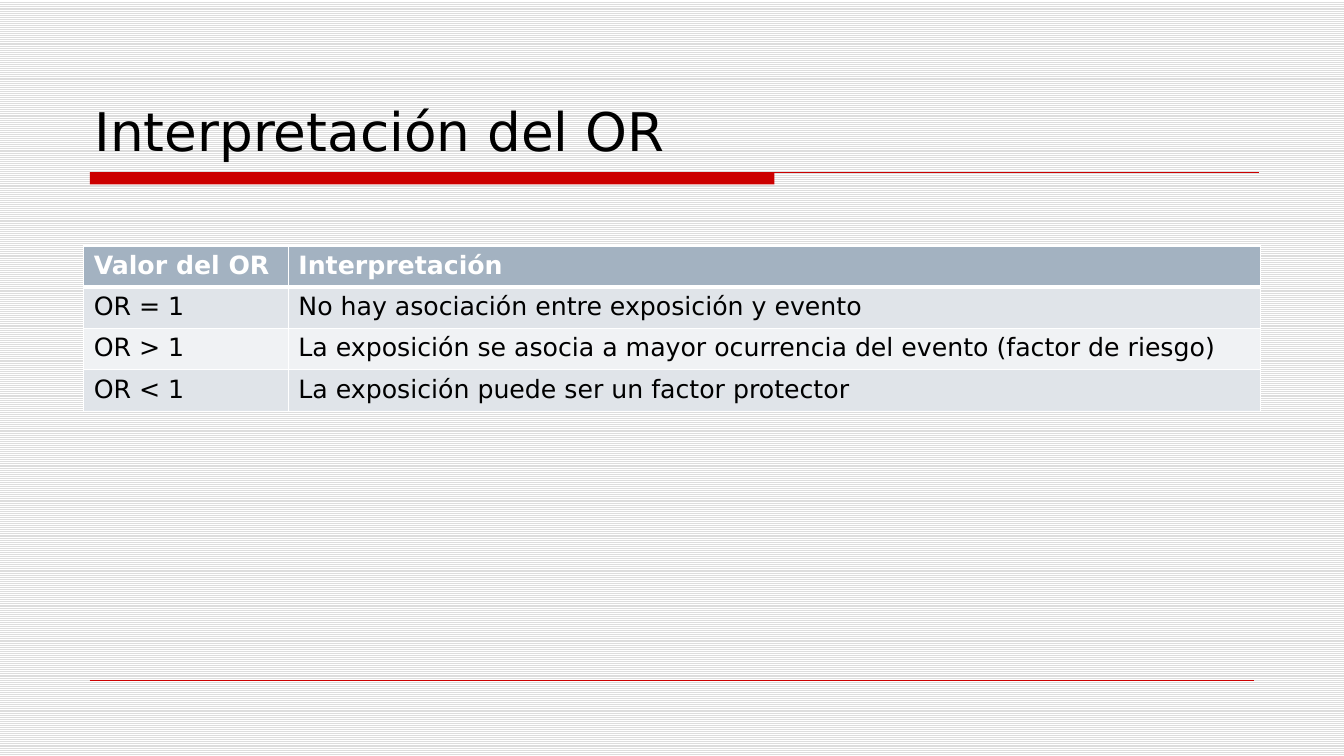
import pptx
import pptx.dml.color
import pptx.enum.dml
import pptx.enum.shapes
import pptx.enum.text
import pptx.oxml
import pptx.oxml.ns
import pptx.util
from lxml import etree

Inches, Pt = pptx.util.Inches, pptx.util.Pt
rgb = pptx.dml.color.RGBColor.from_string

THEME = {
    "font": "DejaVu Sans", "title_size": 38, "table_size": 18,
    "text": "000000", "white": "FFFFFF", "stripe": "DDDDDD", "red": "CC0000",
    "header": "A3B2C1", "bands": ("E0E4E9", "F0F2F4"),
}
ROWS = [
    ("Valor del OR", "Interpretación"),
    ("OR = 1", "No hay asociación entre exposición y evento"),
    ("OR > 1", "La exposición se asocia a mayor ocurrencia del evento (factor de riesgo)"),
    ("OR < 1", "La exposición puede ser un factor protector"),
]
COLUMN_WIDTHS = (2.03, 9.64)
ROW_HEIGHT = 0.41
CONTENT_WIDTH = sum(COLUMN_WIDTHS)
RULE_LEFT, RULE_TOP = 0.89, 1.71


def style_text(p, size, color, bold=False):
    for r in p.runs:
        r.font.name = THEME["font"]
        r.font.size = Pt(size)
        r.font.bold = bold
        r.font.color.rgb = rgb(color)


def add_rule(s, right, y, weight):
    """Draw a thin red horizontal line from the left margin."""
    rule = s.shapes.add_connector(
        pptx.enum.shapes.MSO_CONNECTOR.STRAIGHT,
        Inches(RULE_LEFT), Inches(y), Inches(right), Inches(y))
    rule.line.color.rgb = rgb(THEME["red"])
    rule.line.width = Pt(weight)
    etree.SubElement(rule._element.spPr, pptx.oxml.ns.qn("a:effectLst"))


prs = pptx.Presentation()
prs.slide_width, prs.slide_height = Inches(13.33), Inches(7.5)
s = prs.slides.add_slide(prs.slide_layouts[6])

background = s.background.fill
background.patterned()
background.pattern = pptx.enum.dml.MSO_PATTERN.LIGHT_HORIZONTAL
background.fore_color.rgb = rgb(THEME["stripe"])
background.back_color.rgb = rgb(THEME["white"])

# Red bar and rules
bar = s.shapes.add_shape(
    pptx.enum.shapes.MSO_SHAPE.RECTANGLE,
    Inches(RULE_LEFT), Inches(RULE_TOP), Inches(6.79), Inches(0.12))
bar.shadow.inherit = False
bar.fill.solid()
bar.fill.fore_color.rgb = rgb(THEME["red"])
bar.line.fill.background()
add_rule(s, 12.49, RULE_TOP, 0.75)
add_rule(s, 12.44, 6.75, 0.25)

# Title
title = s.shapes.add_textbox(
    Inches(0.84), Inches(0.33), Inches(CONTENT_WIDTH), Inches(1.33))
tf = title.text_frame
tf.word_wrap = True
tf.vertical_anchor = pptx.enum.text.MSO_ANCHOR.BOTTOM
tf.text = "Interpretación del OR"
style_text(tf.paragraphs[0], THEME["title_size"], THEME["text"])

# Table of OR values
table = s.shapes.add_table(
    len(ROWS), len(COLUMN_WIDTHS), Inches(0.83), Inches(2.44),
    Inches(CONTENT_WIDTH), Inches(ROW_HEIGHT * len(ROWS))).table
for column, width in zip(table.columns, COLUMN_WIDTHS):
    column.width = Inches(width)

for i, row in enumerate(ROWS):
    table.rows[i].height = Inches(ROW_HEIGHT)
    is_header = i == 0
    fill = THEME["header"] if is_header else THEME["bands"][(i - 1) % 2]
    color = THEME["white"] if is_header else THEME["text"]
    border_weights = {"L": 1, "R": 1, "T": 3 if i == 1 else 1, "B": 3 if is_header else 1}
    for j, text in enumerate(row):
        cell = table.cell(i, j)
        cell.text_frame.text = text
        style_text(cell.text_frame.paragraphs[0], THEME["table_size"], color, is_header)
        tcPr = cell._tc.get_or_add_tcPr()
        for side, weight in border_weights.items():
            tcPr.append(pptx.oxml.parse_xml(
                f'<a:ln{side} {pptx.oxml.ns.nsdecls("a")} w="{Pt(weight)}"><a:solidFill>'
                f'<a:srgbClr val="{THEME["white"]}"/></a:solidFill></a:ln{side}>'))
        cell.fill.solid()
        cell.fill.fore_color.rgb = rgb(fill)

prs.save("out.pptx")
